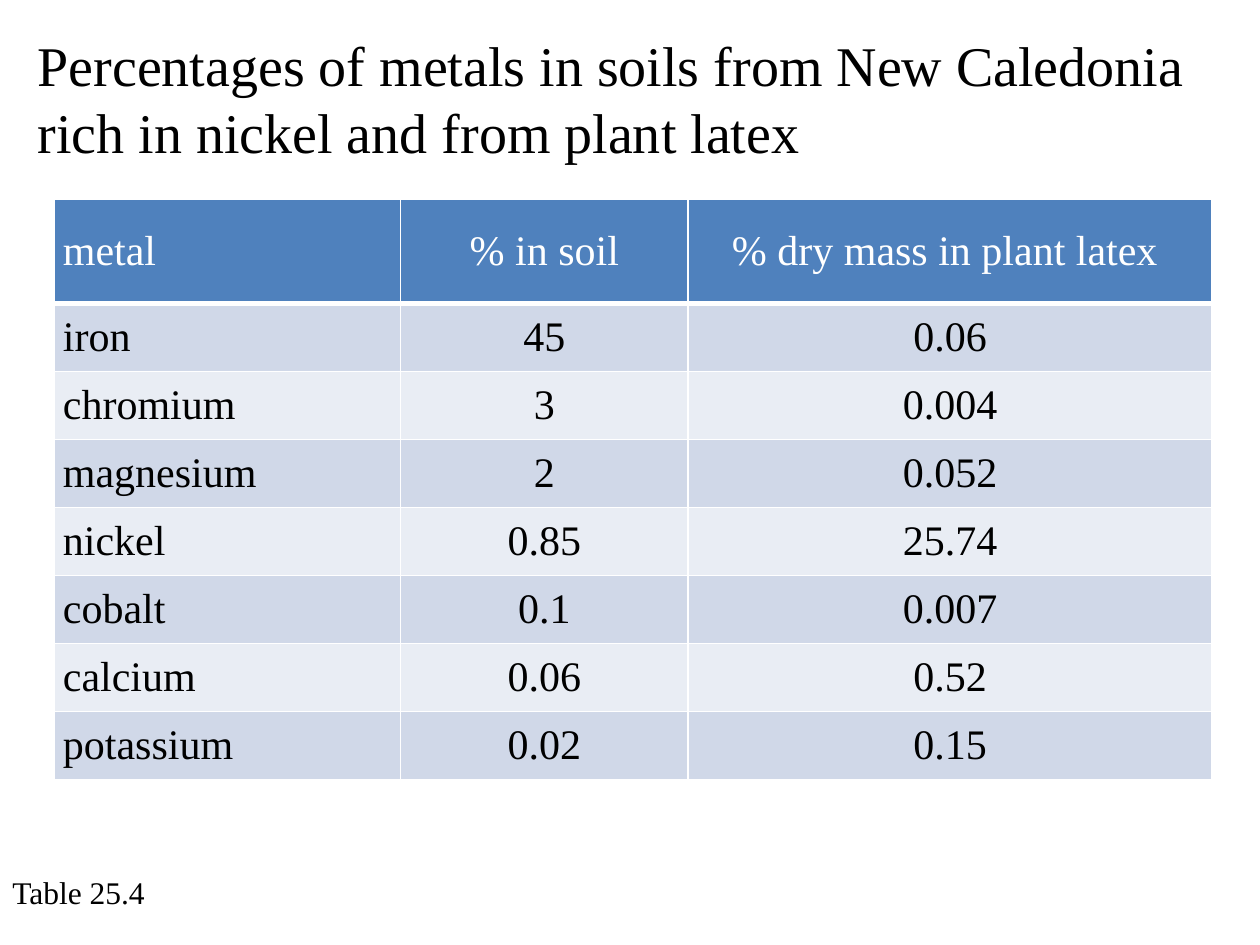
from lxml.etree import SubElement
from pptx import Presentation
from pptx.dml.color import RGBColor
from pptx.enum.text import MSO_ANCHOR, MSO_AUTO_SIZE, PP_ALIGN
from pptx.oxml.ns import qn
from pptx.util import Inches, Pt

BLACK = RGBColor(0x00, 0x00, 0x00)
WHITE = RGBColor(0xFF, 0xFF, 0xFF)
HEADER_BLUE = RGBColor(0x4F, 0x81, 0xBD)
BAND_DARK = RGBColor(0xD0, 0xD8, 0xE8)
BAND_LIGHT = RGBColor(0xE9, 0xED, 0xF4)
FONT = "Times New Roman"

COLUMN_WIDTHS = (2.75, 2.28, 4.16)
HEADER_HEIGHT = 0.83
ROW_HEIGHT = 0.54
METALS = [
    ("metal", "% in soil", "% dry mass in plant latex "),
    ("iron", "45", "0.06"),
    ("chromium", "3", "0.004"),
    ("magnesium", "2", "0.052"),
    ("nickel", "0.85", "25.74"),
    ("cobalt", "0.1", "0.007"),
    ("calcium", "0.06", "0.52"),
    ("potassium", "0.02", "0.15"),
]


def write_text(frame, text, size, color=BLACK, align=PP_ALIGN.LEFT):
    para = frame.paragraphs[0]
    para.alignment = align
    span = para.add_run()
    span.text = text
    span.font.name = FONT
    span.font.size = Pt(size)
    span.font.bold = False
    span.font.color.rgb = color


def add_text_box(page, left, top, width, height, text, size, wrap=True):
    box = page.shapes.add_textbox(
        Inches(left), Inches(top), Inches(width), Inches(height))
    frame = box.text_frame
    frame.word_wrap = wrap
    frame.auto_size = MSO_AUTO_SIZE.SHAPE_TO_FIT_TEXT
    write_text(frame, text, size)


def set_borders(cell, color, **widths):
    properties = cell._tc.get_or_add_tcPr()
    for position, (side, width) in enumerate(widths.items()):
        line = SubElement(properties, qn(f"a:ln{side}"), w=str(Pt(width)))
        fill = SubElement(line, qn("a:solidFill"))
        SubElement(fill, qn("a:srgbClr"), val=str(color))
        properties.insert(position, line)


def fill_cell(cell, text, fill, color, align, bottom, top):
    cell.margin_left = cell.margin_right = Inches(0.07)
    cell.margin_top = cell.margin_bottom = 0
    cell.vertical_anchor = MSO_ANCHOR.MIDDLE
    cell.fill.solid()
    cell.fill.fore_color.rgb = fill
    set_borders(cell, WHITE, L=1, R=1, T=top, B=bottom)
    write_text(cell.text_frame, text, 24, color=color, align=align)


def add_metal_table(page, left, top):
    height = HEADER_HEIGHT + ROW_HEIGHT * (len(METALS) - 1)
    table = page.shapes.add_table(
        len(METALS), len(COLUMN_WIDTHS), Inches(left), Inches(top),
        Inches(sum(COLUMN_WIDTHS)), Inches(height)).table
    for column, width in zip(table.columns, COLUMN_WIDTHS):
        column.width = Inches(width)
    for row_index, values in enumerate(METALS):
        is_header = row_index == 0
        table.rows[row_index].height = Inches(
            HEADER_HEIGHT if is_header else ROW_HEIGHT)
        band = BAND_DARK if row_index % 2 else BAND_LIGHT
        for column_index, text in enumerate(values):
            fill_cell(
                table.cell(row_index, column_index), text,
                fill=HEADER_BLUE if is_header else band,
                color=WHITE if is_header else BLACK,
                align=PP_ALIGN.CENTER if column_index else PP_ALIGN.LEFT,
                bottom=3 if is_header else 1,
                top=3 if row_index == 1 else 1)


def main():
    deck = Presentation()
    deck.slide_width = Inches(10)
    deck.slide_height = Inches(7.5)
    page = deck.slides.add_slide(deck.slide_layouts[6])
    add_text_box(
        page, 0.2, 0.19, 9.43, 1.18,
        "Percentages of metals in soils from New Caledonia rich in nickel "
        "and from plant latex", size=32)
    add_text_box(page, 0, 6.88, 1.33, 0.4, "Table 25.4", size=18, wrap=False)
    add_metal_table(page, 0.43, 1.58)
    deck.save("out.pptx")


if __name__ == "__main__":
    main()
